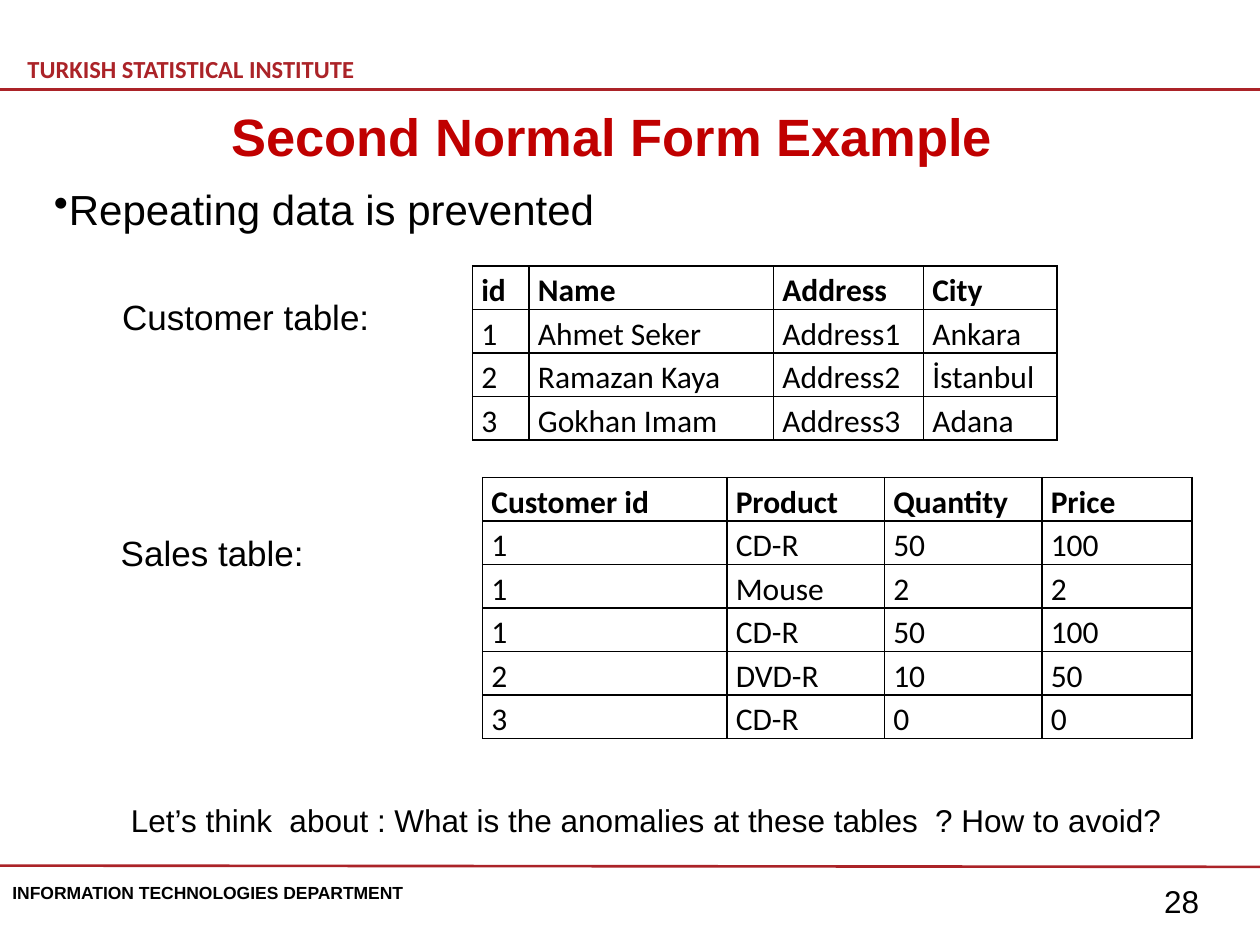
from lxml import etree
from pptx import Presentation
from pptx.dml.color import RGBColor
from pptx.enum.shapes import MSO_CONNECTOR
from pptx.enum.text import MSO_ANCHOR, MSO_AUTO_SIZE
from pptx.oxml.ns import qn
from pptx.util import Inches, Pt

STRAIGHT = MSO_CONNECTOR.STRAIGHT
TOP = MSO_ANCHOR.TOP
GROW = MSO_AUTO_SIZE.SHAPE_TO_FIT_TEXT
COLORS = {"rule": "AB2328", "title": "C00000", "text": "000000"}
ROW = 0.345  # height of a table row


def color(key):
    return RGBColor.from_string(COLORS[key])


class Deck:
    """Holds the text style and the current slide."""

    def __init__(self, slide, font="Arial", size=18):
        self.slide = slide
        self.font = font
        self.size = size

    def run(self, para, text, size=None, font=None, tint="text", bold=False):
        run = para.add_run()
        run.text = text
        run.font.name = font or self.font
        run.font.size = Pt(size or self.size)
        run.font.bold = bold
        run.font.color.rgb = color(tint)

    def text(self, box, text, wrap=False, bullet=None, grow=True, **style):
        shape = self.slide.shapes.add_textbox(*map(Inches, box))
        frame = shape.text_frame
        frame.word_wrap = wrap
        frame.vertical_anchor = TOP
        if grow:
            frame.auto_size = GROW
        para = frame.paragraphs[0]
        if bullet:
            props = para._p.get_or_add_pPr()
            etree.SubElement(props, qn("a:buChar")).set("char", bullet)
        self.run(para, text, **style)
        return frame

    def rule(self, start, end):
        line = self.slide.shapes.add_connector(
            STRAIGHT, *map(Inches, (*start, *end)))
        line.line.color.rgb = color("rule")
        line.line.width = Pt(1.5)
        etree.SubElement(line._element.spPr, qn("a:effectLst"))

    def border(self, cell):
        props = cell._tc.get_or_add_tcPr()
        for side in "LRTB":
            edge = etree.SubElement(props, qn(f"a:ln{side}"), w=str(Pt(1)))
            fill = etree.SubElement(edge, qn("a:solidFill"))
            etree.SubElement(fill, qn("a:srgbClr"), val=COLORS["text"])

    def table(self, left, top, widths, rows):
        """Draw a ruled table whose first row is a bold header."""
        frame = self.slide.shapes.add_table(
            len(rows), len(widths), Inches(left), Inches(top),
            Inches(sum(widths)), Inches(ROW * len(rows)))
        table = frame.table
        table.horz_banding = False
        table.first_row = False
        for col, width in zip(table.columns, widths):
            col.width = Inches(width)
        for r, row in enumerate(rows):
            table.rows[r].height = Inches(ROW)
            for c, text in enumerate(row):
                cell = table.cell(r, c)
                cell.margin_left = cell.margin_right = Inches(0.07)
                cell.margin_top = cell.margin_bottom = 0
                self.border(cell)
                cell.fill.background()
                para = cell.text_frame.paragraphs[0]
                para.line_spacing = 1.15
                self.run(para, text, font="Calibri", bold=r == 0)


def main():
    prs = Presentation()
    prs.slide_width, prs.slide_height = Inches(10), Inches(7.5)
    deck = Deck(prs.slides.add_slide(prs.slide_layouts[6]))

    head = deck.text((0.12, 0.19, 3.54, 0.39), "TURKISH STATISTICAL INSTITUTE",
                     wrap=True, grow=False, size=14, font="Calibri",
                     tint="rule", bold=True)
    head.margin_top, head.margin_bottom = Inches(0.24), 0
    deck.rule((0, 0.71), (10, 0.71))
    deck.rule((0, 6.87), (10, 6.88))
    deck.text((0, 6.95, 3.36, 0.27), "INFORMATION TECHNOLOGIES DEPARTMENT",
              size=10, bold=True)
    deck.text((9.14, 6.95, 0.7, 0.4), "28", wrap=True)

    deck.text((1.74, 0.78, 6.3, 0.61), "Second Normal Form Example",
              size=30, tint="title", bold=True)
    deck.text((0.33, 1.41, 4.7, 0.5), "Repeating data is prevented",
              bullet="•", size=24)

    deck.text((0.87, 2.3, 2.18, 0.44), "Customer table:", size=20)
    deck.text((0.86, 4.17, 1.67, 0.44), "Sales table:", size=20)
    deck.table(3.75, 2.11, (0.45, 1.94, 1.19, 1.06), [
        ("id", "Name", "Address", "City"),
        ("1", "Ahmet Seker", "Address1", "Ankara"),
        ("2", "Ramazan Kaya", "Address2", "İstanbul"),
        ("3", "Gokhan Imam", "Address3", "Adana"),
    ])
    deck.table(3.83, 3.79, (1.94, 1.25, 1.25, 1.19), [
        ("Customer id", "Product", "Quantity", "Price"),
        ("1", "CD-R", "50", "100"),
        ("1", "Mouse", "2", "2"),
        ("1", "CD-R", "50", "100"),
        ("2", "DVD-R", "10", "50"),
        ("3", "CD-R", "0", "0"),
    ])
    deck.text((0.94, 6.31, 8.75, 0.4),
              "Let’s think  about : What is the anomalies at these tables  "
              "? How to avoid?", wrap=True)
    prs.save("out.pptx")


if __name__ == "__main__":
    main()
